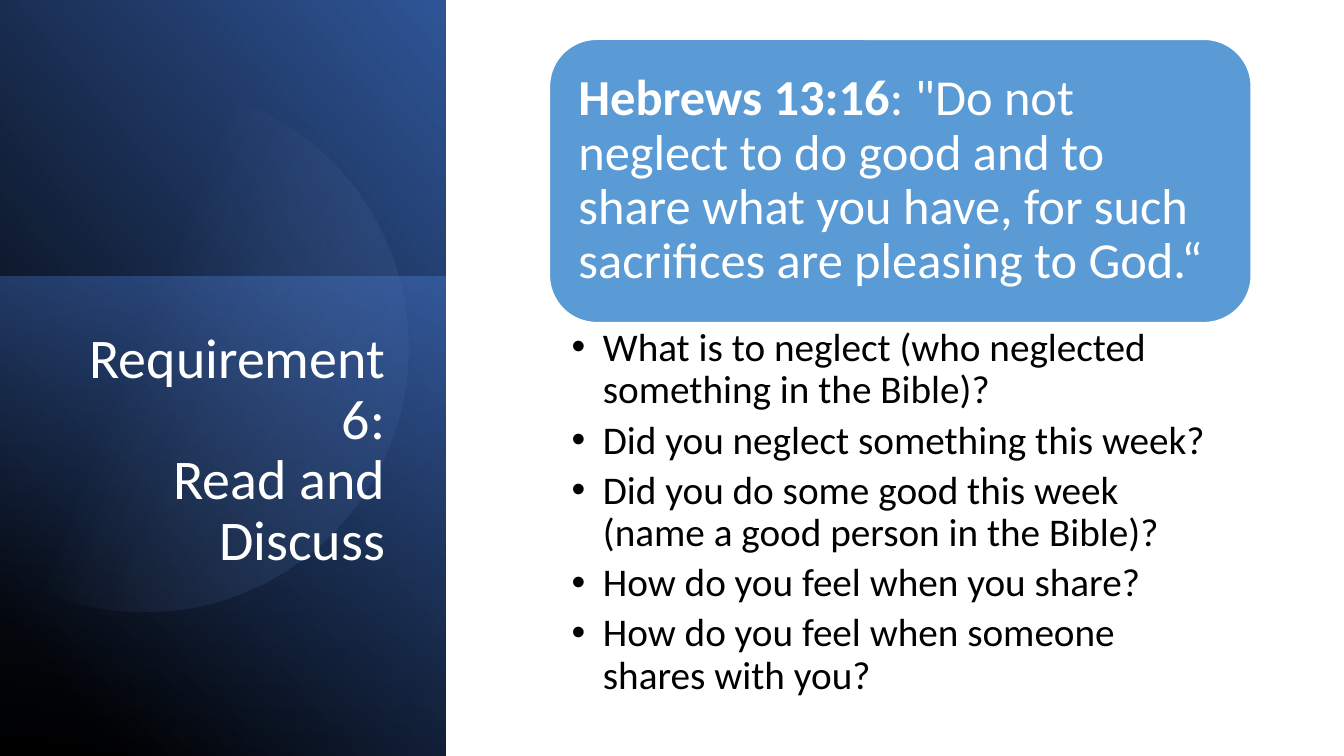
import math

from lxml import etree
from pptx import Presentation
from pptx.dml.color import RGBColor
from pptx.enum.shapes import MSO_SHAPE
from pptx.enum.text import MSO_ANCHOR, MSO_AUTO_SIZE, PP_ALIGN
from pptx.oxml.ns import qn
from pptx.util import Inches, Pt

RECTANGLE, ROUNDED = MSO_SHAPE.RECTANGLE, MSO_SHAPE.ROUNDED_RECTANGLE
TOP, MIDDLE = MSO_ANCHOR.TOP, MSO_ANCHOR.MIDDLE
LEFT, RIGHT = PP_ALIGN.LEFT, PP_ALIGN.RIGHT
NO_AUTOFIT = MSO_AUTO_SIZE.NONE

TITLE = "Requirement 6:\vRead and Discuss"
VERSE_REFERENCE = "Hebrews 13:16"
VERSE = (': "Do not neglect to do good and to share what you have, '
         "for such sacrifices are pleasing to God.“")
QUESTIONS = [
    "What is to neglect (who neglected something in the Bible)?",
    "Did you neglect something this week?",
    "Did you do some good this week (name a good person in the Bible)?",
    "How do you feel when you share?",
    "How do you feel when someone shares with you?",
]

# Gradient stops: position %, colour, opacity %
PANEL_STOPS = [(11, "000000", 100), (100, "2F5597", 100)]
GLOW_STOPS = [(0, "4472C4", 50), (100, "203864", 0)]
DISC_STOPS = [(39, "8FAADC", 0), (100, "2F5597", 26)]

# The disc is a circle cut off by the left edge of the slide
DISC_X, DISC_Y, DISC_RADIUS = 1.43, 3.45, 2.62
DISC_STEPS = 120

CONTENT_LEFT, CONTENT_WIDTH = 5.45, 6.96
VERSE_TOP, VERSE_HEIGHT = 0.39, 2.81
QUESTIONS_HEIGHT = 3.91
BULLET_INDENT = Inches(0.31)


def rgb(color):
    return RGBColor.from_string(color)


def fill_gradient(shape, stops, angle):
    """Give a borderless shape a linear gradient; angle is clockwise degrees."""
    shape.shadow.inherit = False
    shape.line.fill.background()
    shape.fill.gradient()
    gradient = shape.element.spPr.find(qn("a:gradFill"))
    for child in list(gradient):
        gradient.remove(child)
    gradient.set("rotWithShape", "1")
    stop_list = etree.SubElement(gradient, qn("a:gsLst"))
    for position, color, opacity in stops:
        stop = etree.SubElement(stop_list, qn("a:gs"), pos=str(position * 1000))
        tone = etree.SubElement(stop, qn("a:srgbClr"), val=color)
        if opacity < 100:
            etree.SubElement(tone, qn("a:alpha"), val=str(opacity * 1000))
    etree.SubElement(gradient, qn("a:lin"), ang=str(round(angle * 60000)), scaled="0")


def place(shape, left, top, width, height):
    shape.left, shape.top = Inches(left), Inches(top)
    shape.width, shape.height = Inches(width), Inches(height)


def set_frame(frame, anchor, left, top, right, bottom):
    frame.word_wrap = True
    frame.auto_size = NO_AUTOFIT
    frame.vertical_anchor = anchor
    frame.margin_left, frame.margin_top = Inches(left), Inches(top)
    frame.margin_right, frame.margin_bottom = Inches(right), Inches(bottom)


def style(paragraph, size, color, align=LEFT, after=0):
    paragraph.alignment = align
    paragraph.line_spacing = 0.9
    paragraph.space_before = Pt(0)
    paragraph.space_after = Pt(after)
    paragraph.font.name = "Calibri"
    paragraph.font.size = Pt(size)
    paragraph.font.color.rgb = rgb(color)


def add_side_panel(slide):
    shapes = slide.shapes
    panel = shapes.add_shape(RECTANGLE, Inches(-1.55), Inches(1.55),
                             Inches(7.52), Inches(4.42))
    panel.rotation = 90
    panel.element.spPr.find(qn("a:xfrm")).set("flipH", "1")
    fill_gradient(panel, PANEL_STOPS, 310)

    glow = shapes.add_shape(RECTANGLE, Inches(-0.17), Inches(2.91),
                            Inches(4.76), Inches(4.42))
    glow.rotation = 270
    fill_gradient(glow, GLOW_STOPS, 190)

    half_sweep = math.acos(-DISC_X / DISC_RADIUS)
    outline = []
    for step in range(DISC_STEPS + 1):
        turn = half_sweep * (2 * step / DISC_STEPS - 1)
        outline.append((Inches(DISC_X + DISC_RADIUS * math.cos(turn)),
                        Inches(DISC_Y + DISC_RADIUS * math.sin(turn))))
    builder = shapes.build_freeform(*outline[0])
    builder.add_line_segments(outline[1:], close=True)
    fill_gradient(builder.convert_to_shape(), DISC_STOPS, 21.6)


def add_title(slide):
    title = slide.shapes.title
    place(title, 0.58, 3.23, 3.34, 3.86)
    set_frame(title.text_frame, TOP, 0.1, 0.05, 0.1, 0.05)
    title.text_frame.text = TITLE
    style(title.text_frame.paragraphs[0], 40, "FFFFFF", RIGHT)
    slide.shapes.element.append(title.element)  # in front of the side panel


def add_verse(slide):
    card = slide.shapes.add_shape(ROUNDED, 0, 0, 0, 0)
    place(card, CONTENT_LEFT, VERSE_TOP, CONTENT_WIDTH, VERSE_HEIGHT)
    card.shadow.inherit = False
    card.fill.solid()
    card.fill.fore_color.rgb = rgb("5B9BD5")
    card.line.color.rgb = rgb("FFFFFF")
    card.line.width = Pt(1)
    set_frame(card.text_frame, MIDDLE, 0.15, 0.15, 0.15, 0.15)
    paragraph = card.text_frame.paragraphs[0]
    reference = paragraph.add_run()
    reference.text = VERSE_REFERENCE
    reference.font.bold = True
    paragraph.add_run().text = VERSE
    style(paragraph, 36, "FFFFFF")


def add_questions(slide):
    body = slide.placeholders[1]
    place(body, CONTENT_LEFT, VERSE_TOP + VERSE_HEIGHT, CONTENT_WIDTH, QUESTIONS_HEIGHT)
    set_frame(body.text_frame, TOP, 0.22, 0.05, 0.28, 0.05)
    body.text_frame.text = "\n".join(QUESTIONS)
    for paragraph in body.text_frame.paragraphs:
        properties = paragraph._p.get_or_add_pPr()
        properties.set("marL", str(BULLET_INDENT))
        properties.set("indent", str(-BULLET_INDENT))
        etree.SubElement(properties, qn("a:buChar"), char="•")
        style(paragraph, 28, "000000", after=5.6)


def main():
    deck = Presentation()
    deck.slide_width, deck.slide_height = Inches(13.33), Inches(7.5)
    slide = deck.slides.add_slide(deck.slide_layouts[1])
    add_side_panel(slide)
    add_title(slide)
    add_verse(slide)
    add_questions(slide)
    deck.save("out.pptx")


if __name__ == "__main__":
    main()
